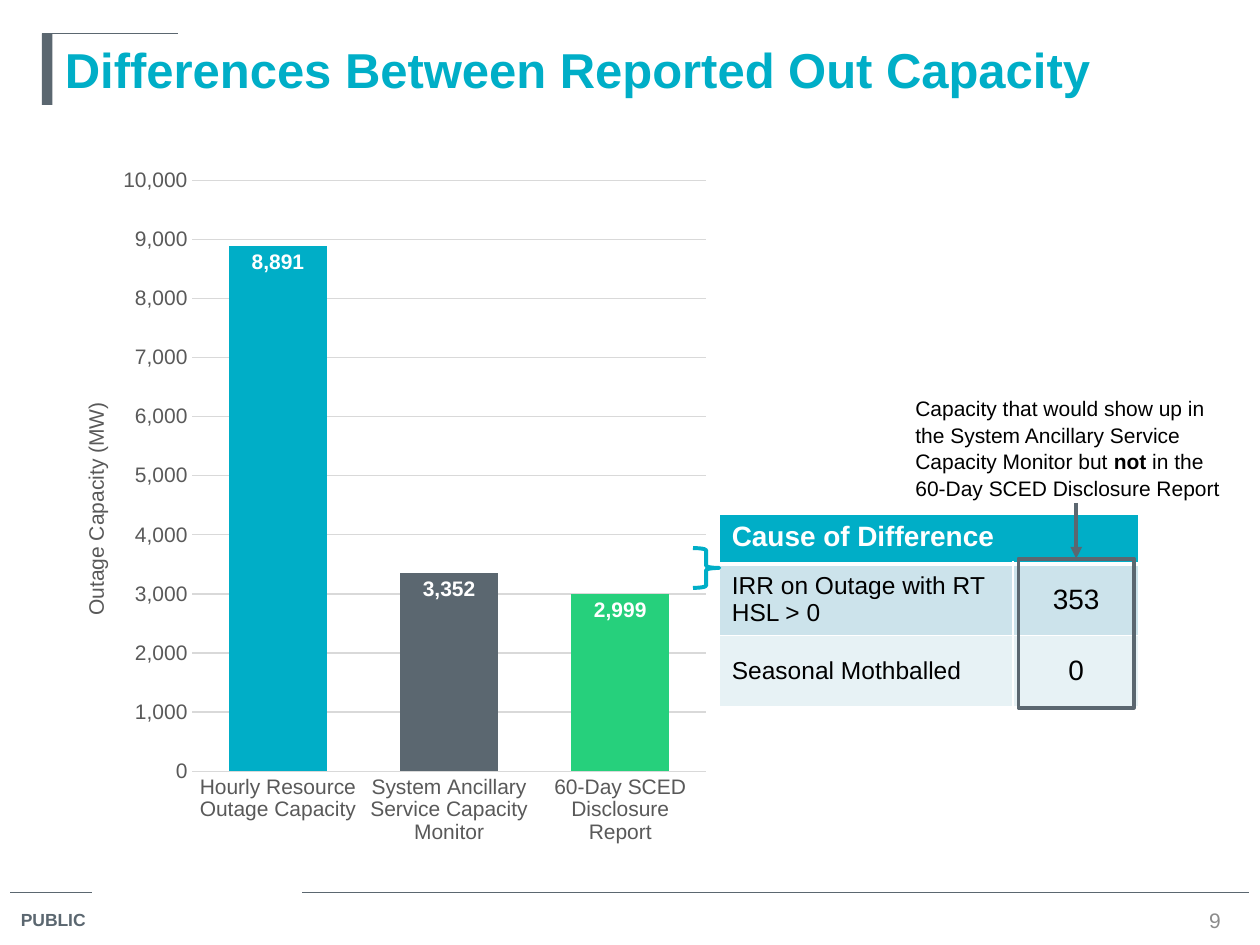
from lxml import etree
from pptx import Presentation
from pptx.chart.data import CategoryChartData
from pptx.dml.color import RGBColor
from pptx.enum.chart import XL_CHART_TYPE, XL_LABEL_POSITION, XL_TICK_MARK
from pptx.enum.shapes import MSO_CONNECTOR, MSO_SHAPE
from pptx.enum.text import MSO_ANCHOR, PP_ALIGN
from pptx.oxml import parse_xml
from pptx.oxml.ns import nsdecls, qn
from pptx.util import Inches, Pt

TEAL, SLATE, GREEN, WHITE, BLACK = "00AEC7", "5B6770", "26D07C", "FFFFFF", "000000"
GRAY, GRID = "595959", "D9D9D9"
COLS, ROWS = 120, 90  # slide grid, 12 cells to the inch


def rgb(color):
    return RGBColor.from_string(color)


def units(*values):
    return [Inches(v / 12) for v in values]


def set_font(font, size, color, bold=False):
    font.name, font.size, font.bold = "Arial", Pt(size), bold
    font.color.rgb = rgb(color)


def set_text(tf, text, size, color, bold=False, align=PP_ALIGN.LEFT):
    tf.word_wrap = True
    p = tf.paragraphs[0]
    p.text, p.alignment = text, align
    set_font(p.font, size, color, bold)


def add_text(s, box, text, size, color, bold=False, align=PP_ALIGN.LEFT,
             anchor=MSO_ANCHOR.TOP):
    tf = s.shapes.add_textbox(*units(*box)).text_frame
    set_text(tf, text, size, color, bold, align)
    tf.vertical_anchor = anchor


def add_shape(s, kind, box, fill=None, line=None):
    sp = s.shapes.add_shape(kind, *units(*box))
    sp.shadow.inherit = False
    if fill:
        sp.fill.solid()
        sp.fill.fore_color.rgb = rgb(fill)
    else:
        sp.fill.background()
    if line:
        sp.line.color.rgb, sp.line.width = rgb(line), Pt(2.25)
    else:
        sp.line.fill.background()
    return sp


def add_line(s, ends, width=0.75):
    c = s.shapes.add_connector(MSO_CONNECTOR.STRAIGHT, *units(*ends))
    c.line.color.rgb, c.line.width = rgb(SLATE), Pt(width)
    etree.SubElement(c._element.spPr, qn("a:effectLst"))
    return c


def add_header(s, x, y, w, h):
    add_shape(s, MSO_SHAPE.RECTANGLE, (x, y, 1, h), SLATE)
    add_line(s, (x, y, x + 13, y))
    add_text(s, (x + 1, y, w - 1, h), "Differences Between Reported Out Capacity",
             28, TEAL, True, anchor=MSO_ANCHOR.BOTTOM)


def add_footer(s, x, y, w):
    add_line(s, (x, y, x + 7.8, y))
    add_line(s, (x + 27.8, y, x + w, y))
    add_text(s, (x - 0.2, y + 1, 9.2, 3.4), "PUBLIC", 10, SLATE, True)
    add_text(s, (x + w - 6.8, y + 1.2, 7, 2.9), "9", 12, "8C8C8C",
             align=PP_ALIGN.CENTER, anchor=MSO_ANCHOR.MIDDLE)


def set_layout(parent, index, modes, **shares):
    """Fix a chart part at shares of the chart's size."""
    for old in parent.findall(qn("c:layout")):
        parent.remove(old)
    parts = "".join(f'<c:{k} val="{v}"/>' for k, v in shares.items())
    parent.insert(index, parse_xml(
        f'<c:layout {nsdecls("c")}><c:manualLayout>{modes}'
        f'<c:xMode val="edge"/><c:yMode val="edge"/>{parts}'
        '</c:manualLayout></c:layout>'))


def add_capacity_chart(s, box):
    data = CategoryChartData(number_format="#,##0")
    data.categories = ["Hourly Resource Outage Capacity",
                       "System Ancillary Service Capacity Monitor",
                       "60-Day SCED Disclosure Report"]
    data.add_series("Series 1", (8891, 3352, 2999))
    chart = s.shapes.add_chart(XL_CHART_TYPE.COLUMN_CLUSTERED, *units(*box), data).chart
    chart.has_title = chart.has_legend = False
    set_font(chart.font, 12, BLACK)

    plot = chart.plots[0]
    plot.gap_width, plot.vary_by_categories = 75, False
    series = plot.series[0]
    series.format.fill.solid()
    series.format.fill.fore_color.rgb = rgb(TEAL)
    for i, color in enumerate((SLATE, GREEN), 1):
        fill = series.points[i].format.fill
        fill.solid()
        fill.fore_color.rgb = rgb(color)
    labels = series.data_labels
    labels.show_value, labels.position = True, XL_LABEL_POSITION.INSIDE_END
    labels.number_format, labels.number_format_is_linked = "#,##0", False
    set_font(labels.font, 12, WHITE, True)

    cat, val = chart.category_axis, chart.value_axis
    for axis in (cat, val):
        axis.major_tick_mark = axis.minor_tick_mark = XL_TICK_MARK.NONE
        set_font(axis.tick_labels.font, 12, GRAY)
    val.minimum_scale, val.maximum_scale, val.major_unit = 0, 10000, 1000
    val.tick_labels.number_format = "#,##0"
    val.tick_labels.number_format_is_linked = False
    val.format.line.fill.background()
    for line in (cat.format.line, val.major_gridlines.format.line):
        line.color.rgb, line.width = rgb(GRID), Pt(0.75)
    p = val.axis_title.text_frame.paragraphs[0]
    p.text = "Outage Capacity (MW)"
    set_font(p.font, 12, GRAY)
    set_layout(val.axis_title._element, 1, "", x=0.04, y=0.35)
    set_layout(chart._chartSpace.chart.plotArea, 0, '<c:layoutTarget val="inner"/>',
               x=0.21, y=0.04, w=0.77, h=0.84)


def set_borders(cell, top=1, bottom=1):
    tcPr = cell._tc.get_or_add_tcPr()
    for i, (side, width) in enumerate(zip("LRTB", (1, 1, top, bottom))):
        tcPr.insert(i, parse_xml(
            f'<a:ln{side} {nsdecls("a")} w="{Pt(width)}"><a:solidFill>'
            f'<a:srgbClr val="{WHITE}"/></a:solidFill></a:ln{side}>'))


def add_cause_table(s, x, y, widths, heights):
    table = s.shapes.add_table(3, 2, *units(x, y, sum(widths), sum(heights))).table
    for col, width in zip(table.columns, units(*widths)):
        col.width = width
    for row, height in zip(table.rows, units(*heights)):
        row.height = height
    rows = [("Cause of Difference", ""), ("IRR on Outage with RT HSL > 0", "353"),
            ("Seasonal Mothballed", "0")]
    for r, (texts, fill) in enumerate(zip(rows, (TEAL, "CCE3EB", "E7F2F5"))):
        for c, text in enumerate(texts):
            cell = table.cell(r, c)
            cell.fill.solid()
            cell.fill.fore_color.rgb = rgb(fill)
            set_borders(cell, top=3 if r == 1 else 1, bottom=3 if r == 0 else 1)
            if r:
                cell.vertical_anchor = MSO_ANCHOR.MIDDLE
                set_text(cell.text_frame, text, 16 if c else 14, BLACK,
                         align=PP_ALIGN.CENTER if c else PP_ALIGN.LEFT)
            elif text:
                set_text(cell.text_frame, text, 16, WHITE, True)
    table.cell(0, 0).merge(table.cell(0, 1))


def add_explanation(s, x, y, w, h):
    """Add the callout, the frame round the table's values and the arrow between."""
    callout = add_shape(s, MSO_SHAPE.RECTANGLE, (x, y, w, h), WHITE)
    tf = callout.text_frame
    tf.word_wrap, tf.vertical_anchor = True, MSO_ANCHOR.TOP
    p = tf.paragraphs[0]
    p.alignment, p.line_spacing = PP_ALIGN.LEFT, 1.05
    for text, bold in (("Capacity that would show up in the System Ancillary Service "
                        "Capacity Monitor but ", False), ("not", True),
                       (" in the 60-Day SCED Disclosure Report", False)):
        r = p.add_run()
        r.text = text
        set_font(r.font, 12, BLACK, bold)
    frame_w = 11
    frame = add_shape(s, MSO_SHAPE.RECTANGLE,
                      (x + (w - frame_w) / 2, y + h + 5.3, frame_w, 14.2), line=SLATE)
    arrow = add_line(s, (0, 0, 1, 1), 2.25)
    arrow.begin_connect(callout, 2)
    arrow.end_connect(frame, 0)
    etree.SubElement(arrow.line._get_or_add_ln(), qn("a:tailEnd"), type="triangle")


def main():
    prs = Presentation()
    prs.slide_width, prs.slide_height = units(COLS, ROWS)
    s = prs.slides.add_slide(prs.slide_layouts[6])
    add_footer(s, 1, 85, 118)
    add_header(s, 4, 3.2, 112, 6.8)
    add_capacity_chart(s, (5, 14.5, 63.5, 67))
    add_cause_table(s, 68.5, 49, (28, 12), (4.7, 6.8, 6.8))
    add_shape(s, MSO_SHAPE.RIGHT_BRACE, (66, 52.2, 2.5, 3.8), line=TEAL)
    add_explanation(s, 86, 37, 33, 10.9)
    prs.save("out.pptx")


if __name__ == "__main__":
    main()
